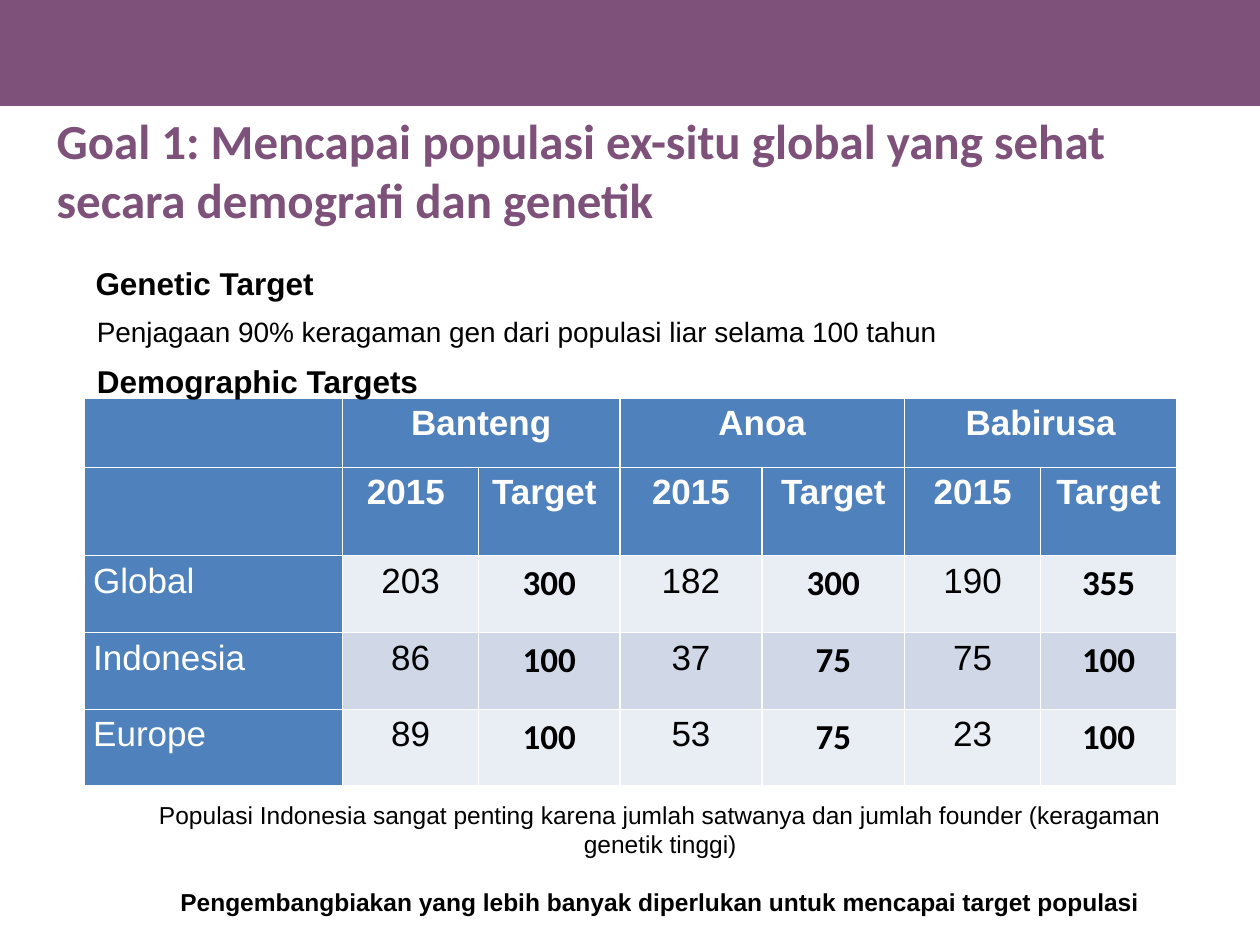
from lxml import etree
from pptx import Presentation
from pptx import util as u
from pptx.dml.color import RGBColor
from pptx.enum import shapes, text
from pptx.oxml import ns

WIDTH, HEIGHT = 10, 7.5
PLUM, BLUE, WHITE, BLACK = "7D5179", "4F81BD", "FFFFFF", "000000"
BANDS = ["E9EDF4", "D0D8E8"]
COLUMNS = [2.05, 1.08, 1.12, 1.13, 1.13, 1.08, 1.08]
ROWS = [0.55, 0.7, 0.61, 0.61, 0.61]
SPECIES = ["Banteng", "Anoa", "Babirusa"]
MEASURES = ["2015 ", "Target ", "2015", "Target", "2015", "Target"]
POPULATIONS = [
    ["Global", 203, 300, 182, 300, 190, 355],
    ["Indonesia", 86, 100, 37, 75, 75, 100],
    ["Europe", 89, 100, 53, 75, 23, 100],
]


def color(value):
    return RGBColor.from_string(value)


def box(left, top, width, height):
    return [u.Inches(n) for n in (left, top, width, height)]


def format_paragraph(paragraph, size, ink=BLACK, bold=False, face="Arial",
                     align=text.PP_ALIGN.LEFT):
    paragraph.alignment = align
    font = paragraph.font
    font.name, font.size, font.bold = face, u.Pt(size), bold
    font.color.rgb = color(ink)


def add_band(slide):
    band = slide.shapes.add_shape(shapes.MSO_SHAPE.RECTANGLE,
                                  *box(0, 0, WIDTH, 0.84))
    band.shadow.inherit = False
    band.fill.solid()
    band.fill.fore_color.rgb = color(PLUM)
    band.line.fill.background()


def set_title(slide, wording):
    title = slide.shapes.title
    title.left, title.top, title.width, title.height = box(0.35, 0.83, 8.74, 1.58)
    frame = title.text_frame
    frame.text = wording
    frame.auto_size = text.MSO_AUTO_SIZE.NONE
    frame.vertical_anchor = text.MSO_ANCHOR.TOP
    format_paragraph(frame.paragraphs[0], 28, PLUM, True, "Calibri")


def add_text(slide, place, lines, size, gap=0, align=text.PP_ALIGN.LEFT):
    frame = slide.shapes.add_textbox(*box(*place)).text_frame
    frame.word_wrap = True
    for index, (wording, bold) in enumerate(lines):
        paragraph = frame.add_paragraph() if index else frame.paragraphs[0]
        paragraph.text = wording
        if index:
            paragraph.space_before = u.Pt(gap)
        format_paragraph(paragraph, size, bold=bold, align=align)


def add_borders(cell):
    properties = cell._tc.get_or_add_tcPr()
    for index, side in enumerate(("lnL", "lnR", "lnT", "lnB")):
        line = etree.Element(ns.qn(f"a:{side}"), w=str(u.Pt(1)))
        fill = etree.SubElement(line, ns.qn("a:solidFill"))
        etree.SubElement(fill, ns.qn("a:srgbClr"), val=WHITE)
        properties.insert(index, line)


def format_cell(cell, wording, row, column):
    heading = row < 2 or column == 0
    target = not heading and column % 2 == 0
    cell.fill.solid()
    cell.fill.fore_color.rgb = color(BLUE if heading else BANDS[row % 2])
    cell.margin_left = cell.margin_right = u.Inches(0.07)
    cell.margin_top = cell.margin_bottom = 0
    add_borders(cell)
    if wording != "":
        cell.text = str(wording)
        paragraph = cell.text_frame.paragraphs[0]
        paragraph.line_spacing = 1.15
        format_paragraph(
            paragraph, 20, WHITE if heading else BLACK, row < 2 or target,
            "Calibri" if target else "Arial",
            text.PP_ALIGN.CENTER if column else text.PP_ALIGN.LEFT)


def add_targets(slide):
    place = box(0.67, 3.16, sum(COLUMNS), sum(ROWS))
    table = slide.shapes.add_table(len(ROWS), len(COLUMNS), *place).table
    for column, width in zip(table.columns, COLUMNS):
        column.width = u.Inches(width)
    for row, height in zip(table.rows, ROWS):
        row.height = u.Inches(height)
    species_row = [""] + [part for name in SPECIES for part in (name, "")]
    for row, entries in enumerate([species_row, [""] + MEASURES] + POPULATIONS):
        for column, wording in enumerate(entries):
            format_cell(table.cell(row, column), wording, row, column)
    for column in range(1, len(COLUMNS), 2):
        table.cell(0, column).merge(table.cell(0, column + 1))


def main():
    deck = Presentation()
    deck.slide_width, deck.slide_height = u.Inches(WIDTH), u.Inches(HEIGHT)
    slide = deck.slides.add_slide(deck.slide_layouts[5])
    add_band(slide)
    set_title(slide, "Goal 1: Mencapai populasi ex-situ global yang sehat "
                     "secara demografi dan genetik")
    add_text(slide, (0.66, 2.05, 8.82, 0.4), [("Genetic Target", True)], 18)
    add_text(slide, (0.67, 2.45, 9.21, 0.37),
             [("Penjagaan 90% keragaman gen dari populasi liar selama 100 tahun",
               False)], 16)
    add_targets(slide)
    add_text(slide, (0.67, 2.82, 8.82, 0.68), [("Demographic Targets", True)], 18)
    add_text(slide, (1, 6.3, 8.48, 1.04),
             [("Populasi Indonesia sangat penting karena jumlah satwanya dan "
               "jumlah founder (keragaman genetik tinggi)", False),
              ("Pengembangbiakan yang lebih banyak diperlukan untuk mencapai "
               "target populasi", True)],
             14, gap=16, align=text.PP_ALIGN.CENTER)
    deck.save("out.pptx")


if __name__ == "__main__":
    main()
